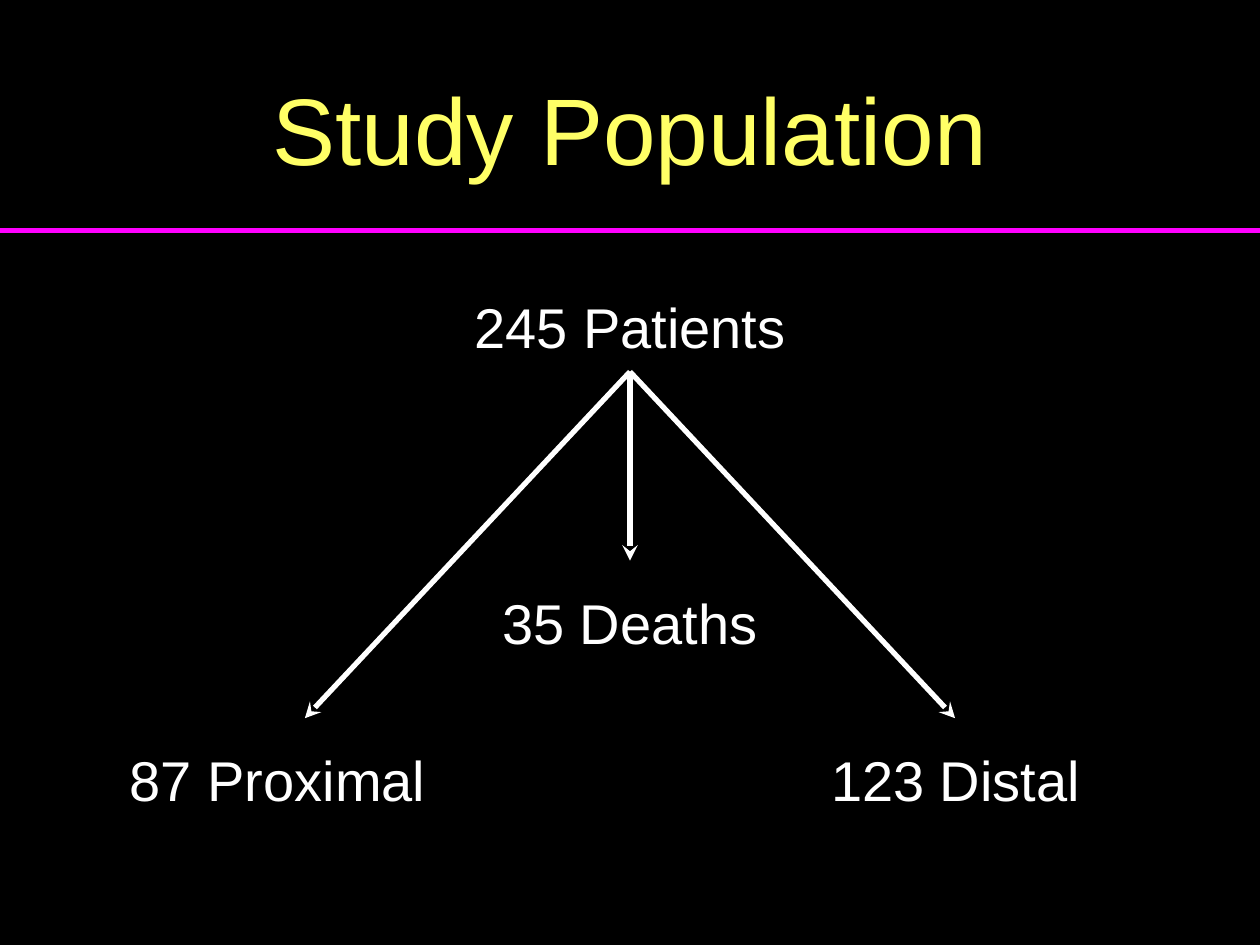
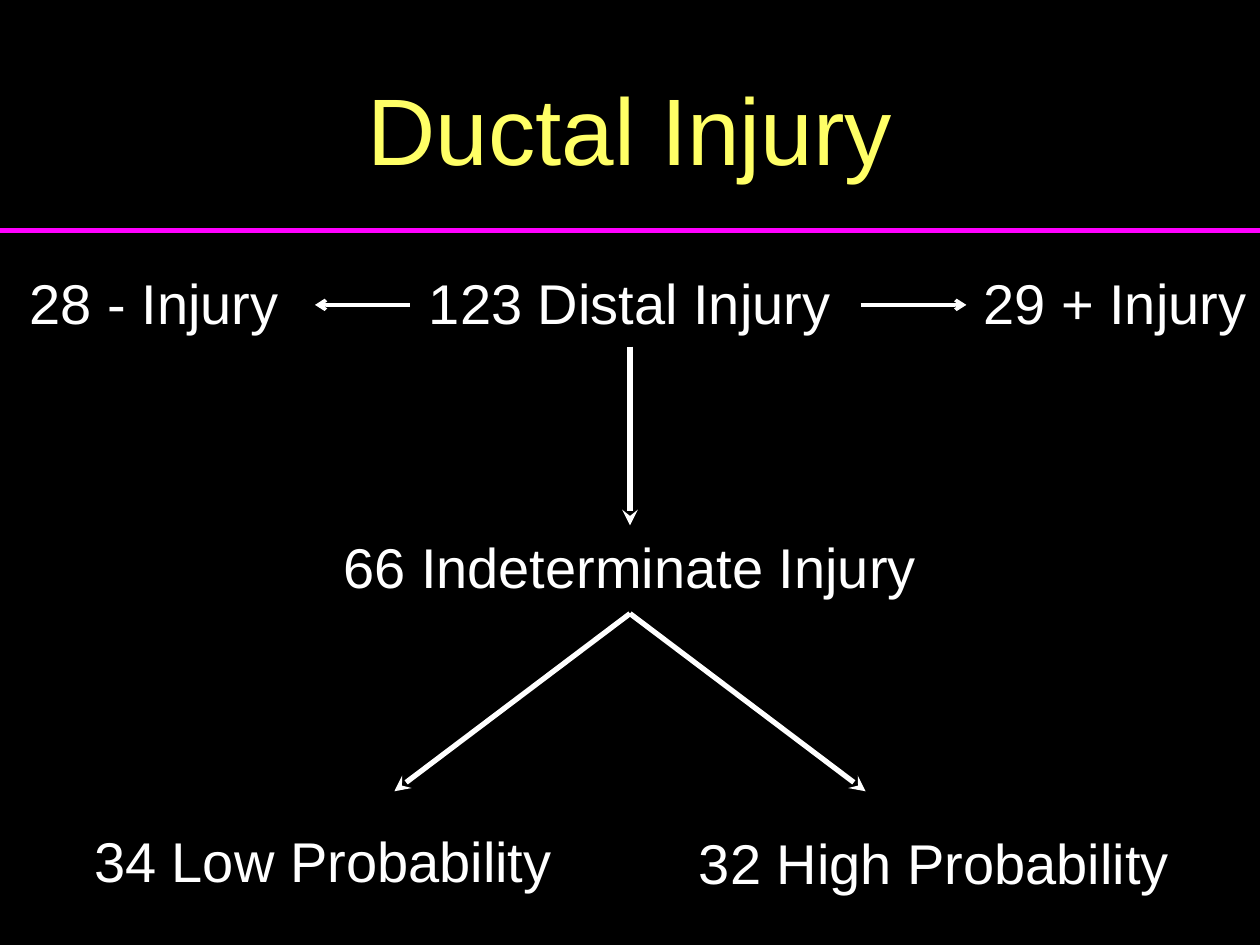
from pptx import Presentation
from pptx.dml.color import RGBColor
from pptx.enum.shapes import MSO_CONNECTOR
from pptx.enum.text import MSO_ANCHOR, PP_ALIGN
from pptx.oxml.ns import qn
from pptx.util import Inches, Pt
from lxml import etree

STRAIGHT = MSO_CONNECTOR.STRAIGHT
MIDDLE = MSO_ANCHOR.MIDDLE
TOP = MSO_ANCHOR.TOP
CENTER = PP_ALIGN.CENTER

FONT = "Arial"
WIDE = 10
MID = WIDE / 2
COLORS = {"back": "000000", "title": "FFFF66", "rule": "FF00FF", "text": "FFFFFF"}


def color(name):
    return RGBColor.from_string(COLORS[name])


def style(shape, text, size, tint, anchor):
    frame = shape.text_frame
    frame.text = text
    frame.word_wrap = True
    frame.vertical_anchor = anchor
    frame.margin_left = frame.margin_right = 0
    para = frame.paragraphs[0]
    para.alignment = CENTER
    font = para.runs[0].font
    font.name = FONT
    font.size = Pt(size)
    font.color.rgb = color(tint)


def add_line(slide, start, end, tint="text", width=3, head=None):
    points = [Inches(value) for value in (*start, *end)]
    line = slide.shapes.add_connector(STRAIGHT, *points)
    line.line.color.rgb = color(tint)
    line.line.width = Pt(width)
    if head:
        tail = etree.SubElement(line.line._get_or_add_ln(), qn("a:tailEnd"))
        tail.set("type", head)
    etree.SubElement(line._element.spPr, qn("a:effectLst"))


def add_arrow(slide, start, end):
    add_line(slide, start, end, head="stealth")


def add_fork(slide, top, low, reach):
    for side in (-1, 1):
        add_arrow(slide, (MID, top), (MID + side * reach, low))


def add_label(slide, text, top, left=0, width=WIDE):
    box = slide.shapes.add_textbox(
        Inches(left), Inches(top), Inches(width), Inches(0.63))
    style(box, text, 32, "text", TOP)


def add_slide(deck, text):
    slide = deck.slides.add_slide(deck.slide_layouts[5])
    title = slide.shapes.title
    title.left, title.top = Inches(0), Inches(0.39)
    title.width, title.height = Inches(WIDE), Inches(1.25)
    style(title, text, 54, "title", MIDDLE)
    add_line(slide, (0, 1.83), (WIDE, 1.83), "rule")
    return slide


def add_study(deck):
    slide = add_slide(deck, "Study Population")
    add_label(slide, "245 Patients", 2.27)
    add_label(slide, "87 Proximal", 5.87, 0.58, 3.25)
    add_label(slide, "123 Distal", 5.87, 5.75, 3.67)
    add_label(slide, "35 Deaths", 4.62)
    add_fork(slide, 2.95, 5.7, 2.58)
    add_arrow(slide, (MID, 2.95), (MID, 4.45))


def add_injury(deck):
    slide = add_slide(deck, "Ductal Injury")
    add_label(slide, "123 Distal Injury", 2.08)
    add_label(slide, "28 - Injury", 2.08, 0, 2.45)
    add_label(slide, "29 + Injury", 2.08, 7.7, 2.3)
    add_line(slide, (3.25, 2.42), (2.5, 2.42), width=2, head="arrow")
    add_line(slide, (6.83, 2.42), (7.67, 2.42), width=2, head="arrow")
    add_arrow(slide, (MID, 2.75), (MID, 4.17))
    add_label(slide, "66 Indeterminate Injury", 4.18)
    add_fork(slide, 4.87, 6.28, 1.87)
    add_label(slide, "34 Low Probability", 6.51, 0.48, 4.17)
    add_label(slide, "32 High Probability", 6.53, 5.33, 4.17)


def main():
    deck = Presentation()
    deck.slide_width = Inches(WIDE)
    deck.slide_height = Inches(7.5)
    fill = deck.slide_master.background.fill
    fill.solid()
    fill.fore_color.rgb = color("back")
    add_study(deck)
    add_injury(deck)
    deck.save("out.pptx")


if __name__ == "__main__":
    main()
